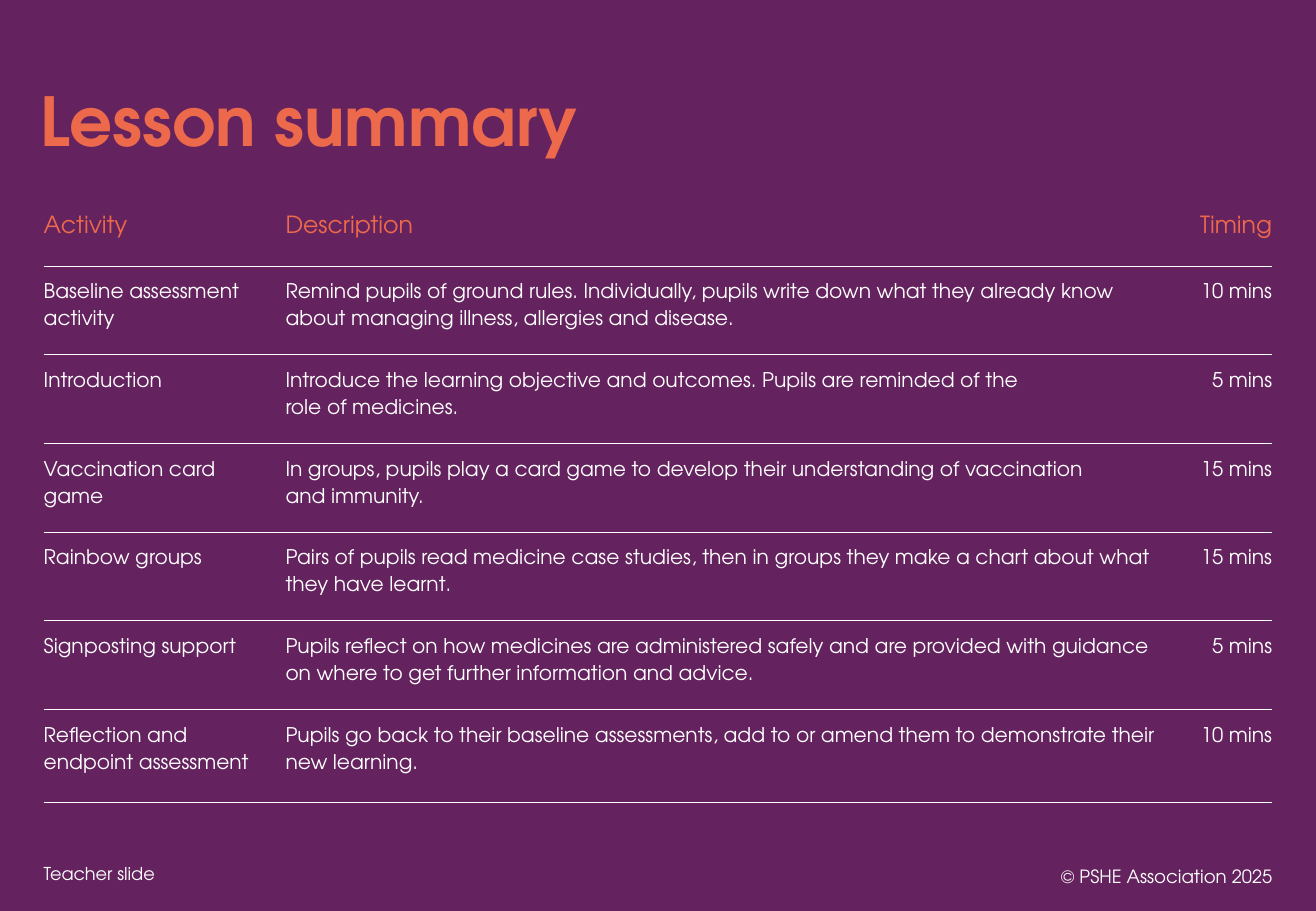
from dataclasses import dataclass
from typing import Any

from lxml import etree
from pptx import Presentation
from pptx import util as u
from pptx.dml.color import RGBColor
from pptx.enum import text
from pptx.oxml import ns


@dataclass(frozen=True)
class Theme:
    font: str = "TeX Gyre Adventor"
    purple: str = "64235E"
    orange: str = "ED694B"
    white: str = "FFFFFF"
    title_size: float = 40
    header_size: float = 14
    body_size: float = 12
    teacher_size: float = 10.5
    copyright_size: float = 10.8
    body_spacing: float = 16
    rule_width: float = 0.5
    cell_margin: float = 5.76


@dataclass(frozen=True)
class Activity:
    name: str
    description: str
    timing: str


@dataclass(frozen=True)
class Label:
    wording: str
    left: float
    top: float
    width: float
    height: float
    size: float
    align: text.PP_ALIGN
    anchor: text.MSO_ANCHOR


THEME = Theme()
LEFT, RIGHT = text.PP_ALIGN.LEFT, text.PP_ALIGN.RIGHT
TOP, MIDDLE = text.MSO_ANCHOR.TOP, text.MSO_ANCHOR.MIDDLE

HEADER = Activity("Activity", "Description", "Timing")
ACTIVITIES = [
    Activity(
        "Baseline assessment activity",
        "Remind pupils of ground rules. Individually, pupils write down what they "
        "already know about managing illness, allergies and disease.",
        "10 mins",
    ),
    Activity(
        "Introduction",
        "Introduce the learning objective and outcomes. Pupils are reminded of the "
        "\vrole of medicines.",
        "5 mins",
    ),
    Activity(
        "Vaccination card game",
        "In groups, pupils play a card game to develop their understanding of "
        "vaccination \vand immunity.",
        "15 mins",
    ),
    Activity(
        "Rainbow groups",
        "Pairs of pupils read medicine case studies, then in groups they make a "
        "chart about what they have learnt.",
        "15 mins",
    ),
    Activity(
        "Signposting support",
        "Pupils reflect on how medicines are administered safely and are provided "
        "with guidance on where to get further information and advice.",
        "5 mins",
    ),
    Activity(
        "Reflection and endpoint assessment",
        "Pupils go back to their baseline assessments, add to or amend them to "
        "demonstrate their new learning.",
        "10 mins",
    ),
]
LABELS = [
    Label("Teacher slide", 18.72, 507.6, 488.16, 20.88,
          THEME.teacher_size, LEFT, TOP),
    Label("© PSHE Association 2025", 585.36, 504.72, 175.68, 28.8,
          THEME.copyright_size, RIGHT, MIDDLE),
]

TABLE_LEFT, TABLE_TOP = 25.92, 110.88
COLUMN_WIDTHS = [143.28, 527.76, 56.88]
ROW_HEIGHTS = [46.8] + [52.56] * 5 + [55.44]


def write(frame: Any, wording: str, size: float, colour: str,
          align: text.PP_ALIGN = LEFT, bold: bool = False) -> Any:
    """Fill a text frame with one styled paragraph and return the paragraph."""
    frame.text = wording
    frame.word_wrap = True
    para = frame.paragraphs[0]
    para.alignment = align
    for span in para.runs:
        span.font.name = THEME.font
        span.font.size = u.Pt(size)
        span.font.bold = bold
        span.font.color.rgb = RGBColor.from_string(colour)
    return para


def add_title(page: Any) -> None:
    title = page.shapes.title
    title.left, title.top = u.Pt(16.56), u.Pt(46.8)
    title.width, title.height = u.Pt(590.4), u.Pt(54.72)
    title.text_frame.vertical_anchor = MIDDLE
    para = write(title.text_frame, "Lesson summary", THEME.title_size,
                 THEME.orange, bold=True)
    para.line_spacing = 0.9


def add_label(page: Any, label: Label) -> None:
    box = page.shapes.add_textbox(u.Pt(label.left), u.Pt(label.top),
                                  u.Pt(label.width), u.Pt(label.height))
    box.text_frame.vertical_anchor = label.anchor
    write(box.text_frame, label.wording, label.size, THEME.white, label.align)


def set_borders(cell: Any, ruled_sides: str) -> None:
    """Draw a white rule on the named sides (of L, R, T, B) and clear the others."""
    properties = cell._tc.get_or_add_tcPr()
    for side in "LRTB":
        line = etree.SubElement(properties, ns.qn(f"a:ln{side}"),
                                w=str(u.Pt(THEME.rule_width)))
        if side in ruled_sides:
            fill = etree.SubElement(line, ns.qn("a:solidFill"))
            etree.SubElement(fill, ns.qn("a:srgbClr"), val=THEME.white)
        else:
            etree.SubElement(line, ns.qn("a:noFill"))


def format_cell(cell: Any, wording: str, is_header: bool, is_timing: bool) -> None:
    margin = u.Pt(THEME.cell_margin)
    cell.margin_top = cell.margin_bottom = margin
    cell.margin_left = margin if is_timing else 0
    cell.margin_right = 0 if is_timing else margin
    cell.vertical_anchor = MIDDLE if is_header else TOP
    set_borders(cell, "B" if is_header else "TB")
    cell.fill.background()
    size = THEME.header_size if is_header else THEME.body_size
    colour = THEME.orange if is_header else THEME.white
    para = write(cell.text_frame, wording, size, colour,
                 RIGHT if is_timing else LEFT)
    if not is_header:
        para.line_spacing = u.Pt(THEME.body_spacing)


def add_summary_table(page: Any) -> None:
    table = page.shapes.add_table(
        len(ROW_HEIGHTS), len(COLUMN_WIDTHS), u.Pt(TABLE_LEFT), u.Pt(TABLE_TOP),
        u.Pt(sum(COLUMN_WIDTHS)), u.Pt(sum(ROW_HEIGHTS))).table
    table.first_row = table.horz_banding = False
    for column, width in zip(table.columns, COLUMN_WIDTHS):
        column.width = u.Pt(width)
    for index, (row, activity) in enumerate(zip(table.rows, [HEADER, *ACTIVITIES])):
        row.height = u.Pt(ROW_HEIGHTS[index])
        wordings = [activity.name, activity.description, activity.timing]
        for position, (cell, wording) in enumerate(zip(row.cells, wordings)):
            format_cell(cell, wording, index == 0, position == 2)


def main() -> None:
    deck = Presentation()
    deck.slide_width, deck.slide_height = u.Pt(779.76), u.Pt(540)
    page = deck.slides.add_slide(deck.slide_layouts.get_by_name("Title Only"))
    page.background.fill.solid()
    page.background.fill.fore_color.rgb = RGBColor.from_string(THEME.purple)
    add_title(page)
    add_summary_table(page)
    for label in LABELS:
        add_label(page, label)
    deck.save("out.pptx")


if __name__ == "__main__":
    main()
